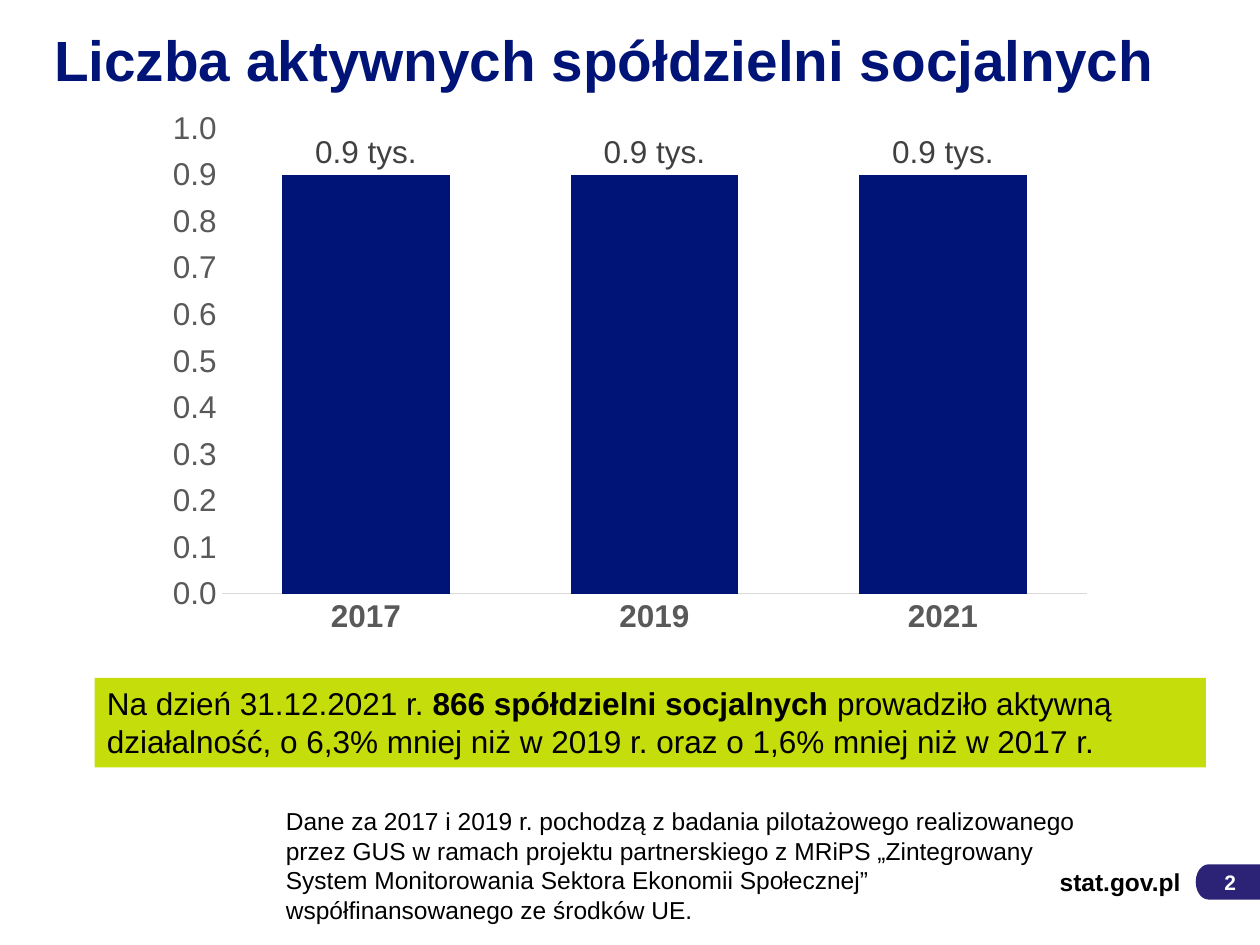
from pptx import Presentation
from pptx.chart.data import CategoryChartData
from pptx.dml.color import RGBColor
from pptx.enum.chart import XL_CHART_TYPE, XL_LABEL_POSITION, XL_TICK_MARK
from pptx.enum.shapes import MSO_SHAPE
from pptx.enum.text import MSO_ANCHOR, PP_ALIGN
from pptx.util import Inches, Pt

COLUMN = XL_CHART_TYPE.COLUMN_CLUSTERED
OUTSIDE = XL_LABEL_POSITION.OUTSIDE_END
NO_TICK = XL_TICK_MARK.NONE
TOP, MIDDLE, BOTTOM = MSO_ANCHOR.TOP, MSO_ANCHOR.MIDDLE, MSO_ANCHOR.BOTTOM
LEFT, RIGHT = PP_ALIGN.LEFT, PP_ALIGN.RIGHT

FONT = "Arial"
NAVY, VIOLET, LIME = "001377", "2C2276", "C5DD0A"
BLACK, WHITE = "000000", "FFFFFF"
INSETS = (0.1, 0.05, 0.1, 0.05)

# Content: runs are (text, bold)
TITLE = [("Liczba aktywnych spółdzielni socjalnych", True)]
YEARS = ["2017", "2019", "2021"]
COOPERATIVES = [0.9, 0.9, 0.9]  # thousands
SUMMARY = [
    ("Na dzień 31.12.2021 r. ", False),
    ("866 spółdzielni socjalnych ", True),
    ("prowadziło aktywną działalność, o 6,3% mniej niż w 2019 r. "
     "oraz o 1,6% mniej niż w 2017 r.", False),
]
NOTE = [("Dane za 2017 i 2019 r. pochodzą z badania pilotażowego realizowanego "
         "przez GUS w ramach projektu partnerskiego z MRiPS „Zintegrowany System "
         "Monitorowania Sektora Ekonomii Społecznej” współfinansowanego ze "
         "środków UE.", False)]
SITE = [("stat.gov.pl", True)]
PAGE = [("2", True)]


def rgb(value):
    return RGBColor.from_string(value)


def set_font(font, size, color, bold=False):
    font.name, font.size, font.bold = FONT, Pt(size), bold
    font.color.rgb = rgb(color)


def write(sp, runs, size, color=BLACK, align=LEFT, anchor=TOP, insets=INSETS):
    tf = sp.text_frame
    tf.word_wrap = True
    tf.vertical_anchor = anchor
    (tf.margin_left, tf.margin_top,
     tf.margin_right, tf.margin_bottom) = map(Inches, insets)
    p = tf.paragraphs[0]
    p.alignment = align
    for text, bold in runs:
        r = p.add_run()
        r.text = text
        set_font(r.font, size, color, bold)
    return p


def add_text(s, box, *args, **kwargs):
    return write(s.shapes.add_textbox(*map(Inches, box)), *args, **kwargs)


def add_panel(s, kind, box, fill):
    sp = s.shapes.add_shape(kind, *map(Inches, box))
    sp.shadow.inherit = False
    sp.fill.solid()
    sp.fill.fore_color.rgb = rgb(fill)
    sp.line.fill.background()
    return sp


def add_column_chart(s, box):
    data = CategoryChartData(number_format="0.0")
    data.categories = YEARS
    data.add_series("Spółdzielnie socjalne", COOPERATIVES)
    chart = s.shapes.add_chart(COLUMN, *map(Inches, box), data).chart
    chart.has_legend = chart.has_title = False
    set_font(chart.font, 18, BLACK)

    plot = chart.plots[0]
    plot.gap_width, plot.overlap = 72, -27
    plot.vary_by_categories = False
    fill = plot.series[0].format.fill
    fill.solid()
    fill.fore_color.rgb = rgb(NAVY)

    plot.has_data_labels = True
    labels = plot.data_labels
    labels.show_value = True
    labels.position = OUTSIDE
    labels.number_format = '#,##0.0" tys."'
    labels.number_format_is_linked = False
    set_font(labels.font, 18, "404040")

    years, values = chart.category_axis, chart.value_axis
    for axis, bold in ((years, True), (values, False)):
        axis.major_tick_mark = axis.minor_tick_mark = NO_TICK
        axis.has_major_gridlines = False
        set_font(axis.tick_labels.font, 18, "595959", bold)
    years.format.line.color.rgb = rgb("D9D9D9")
    years.format.line.width = Pt(0.75)
    values.format.line.fill.background()
    values.minimum_scale, values.maximum_scale, values.major_unit = 0, 1, 0.1
    values.tick_labels.number_format = "0.0"
    values.tick_labels.number_format_is_linked = False


def main():
    prs = Presentation()
    prs.slide_width, prs.slide_height = Inches(10), Inches(7.5)
    s = prs.slides.add_slide(prs.slide_layouts[6])

    # Footer: page tab and site address
    tab = add_panel(s, MSO_SHAPE.FLOWCHART_TERMINATOR,
                    (9.49, 6.86, 0.63, 0.28), VIOLET)
    write(tab, PAGE, 12, WHITE, RIGHT, MIDDLE, (0.04, 0.05, 0.28, 0.05))
    add_text(s, (8.19, 6.83, 1.18, 0.34), SITE, 14, align=RIGHT,
             anchor=MIDDLE, insets=(0, 0.05, 0, 0.05))

    # Chart and title
    add_column_chart(s, (1.22, 0.79, 7.56, 4.33))
    p = add_text(s, (0.43, 0, 9.45, 0.79), TITLE, 32.4, NAVY,
                 anchor=BOTTOM, insets=(0, 0.05, 0, 0.05))
    p.line_spacing = 0.9

    # Summary band and source note
    band = add_panel(s, MSO_SHAPE.RECTANGLE, (0.75, 5.38, 8.82, 0.71), LIME)
    write(band, SUMMARY, 18)
    add_text(s, (2.17, 6.35, 6.61, 1.04), NOTE, 14)

    prs.save("out.pptx")


if __name__ == "__main__":
    main()
